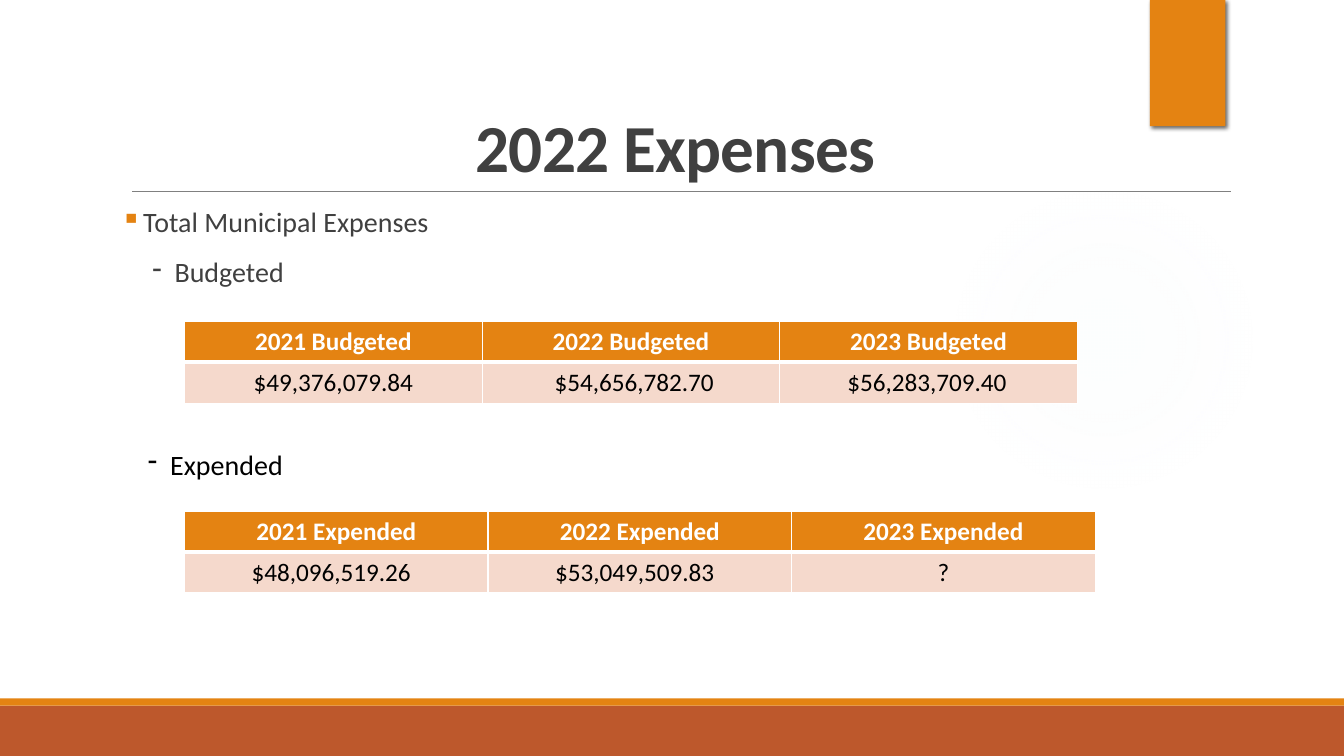
"""Build the 2022 Expenses slide."""
from dataclasses import dataclass

from lxml import etree
from pptx import Presentation, util as u
from pptx.dml.color import RGBColor
from pptx.enum import shapes, text
from pptx.oxml import parse_xml
from pptx.oxml.ns import nsdecls

Cm, Pt = u.Cm, u.Pt


@dataclass(frozen=True)
class Theme:
    """Hold the colours, font and type sizes of the slide."""
    orange: str = "E48312"
    rust: str = "BD582C"
    blush: str = "F5D9CC"
    mist: str = "E0EBF2"
    rule: str = "808080"
    grey: str = "404040"
    white: str = "FFFFFF"
    black: str = "000000"
    font: str = "Calibri"
    title: int = 48
    body: int = 20
    cell: int = 18


THEME = Theme()


def rgb(value):
    """Turn a hex string into a colour."""
    return RGBColor.from_string(value)


def add_xml(parent, body):
    """Append one DrawingML element to a parent."""
    head, tail = body.split(">", 1)
    slash = "/" if head.endswith("/") else ""
    parent.append(parse_xml(f"{head.rstrip('/')} {nsdecls('a')}{slash}>{tail}"))


def write(tf, content, *, size, color, bold=False, align=None, line=None,
          after=None, before=None, bullet=None, bullet_color=None,
          indent=0, hang=0.56, spacing=None, new=False):
    """Write one formatted paragraph into a text frame."""
    p = tf.add_paragraph() if new else tf.paragraphs[0]
    p.alignment, p.line_spacing = align, line
    p.space_before = None if before is None else Pt(before)
    p.space_after = None if after is None else Pt(after)
    if bullet:
        pPr = p._p.get_or_add_pPr()
        pPr.set("marL", str(Cm(indent + hang)))
        pPr.set("indent", str(-Cm(hang)))
        add_xml(pPr, f'<a:buClr><a:srgbClr val="{bullet_color or color}"/></a:buClr>')
        add_xml(pPr, f'<a:buChar char="{bullet}"/>')
    r = p.add_run()
    r.text = content
    r.font.name, r.font.size, r.font.bold = THEME.font, Pt(size), bold
    r.font.color.rgb = rgb(color)
    if spacing:
        r._r.get_or_add_rPr().set("spc", str(spacing))


def add_box(s, left, top, width, height, anchor=text.MSO_ANCHOR.TOP, side=0.25):
    """Add a wrapping text box and return its text frame."""
    tf = s.shapes.add_textbox(Cm(left), Cm(top), Cm(width), Cm(height)).text_frame
    tf.word_wrap, tf.vertical_anchor = True, anchor
    tf.margin_left = tf.margin_right = Cm(side)
    return tf


def add_block(s, left, top, width, height, color, kind=shapes.MSO_SHAPE.RECTANGLE):
    """Add a plain filled shape without outline or shadow."""
    sp = s.shapes.add_shape(kind, Cm(left), Cm(top), Cm(width), Cm(height))
    sp.shadow.inherit = False
    sp.fill.solid()
    sp.fill.fore_color.rgb = rgb(color)
    sp.line.fill.background()
    return sp


def add_glow(s):
    """Add the faint round glow on the right."""
    sp = add_block(s, 23.9, 4.65, 7.82, 7.82, THEME.mist, shapes.MSO_SHAPE.OVAL)
    stops = "".join(
        f'<a:gs pos="{pos}000"><a:srgbClr val="{THEME.mist}">'
        f'<a:alpha val="{alpha}000"/></a:srgbClr></a:gs>'
        for pos, alpha in ((0, 7), (36, 6), (69, 0)))
    grad = parse_xml(
        f'<a:gradFill {nsdecls("a")}><a:gsLst>{stops}</a:gsLst><a:path path="circle">'
        '<a:fillToRect l="50000" t="50000" r="50000" b="50000"/></a:path></a:gradFill>')
    spPr = sp._element.spPr
    solid = spPr.find("{*}solidFill")
    spPr.replace(solid, grad)


def add_tab(s):
    """Add the orange tab with its soft shadow."""
    sp = add_block(s, 28.98, 0, 1.9, 3.18, THEME.orange)
    add_xml(sp._element.spPr.find("{*}effectLst"),
            f'<a:outerShdw blurRad="{Pt(3)}" dist="{Pt(2)}" dir="2700000">'
            f'<a:srgbClr val="{THEME.black}"><a:alpha val="60000"/></a:srgbClr>'
            '</a:outerShdw>')


def add_rule(s):
    """Add the thin line under the title."""
    cxn = s.shapes.add_connector(shapes.MSO_CONNECTOR.STRAIGHT,
                                 Cm(3.33), Cm(4.83), Cm(31.01), Cm(4.83))
    cxn.line.color.rgb, cxn.line.width = rgb(THEME.rule), Pt(0.5)
    etree.SubElement(cxn._element.spPr,
                     "{http://schemas.openxmlformats.org/drawingml/2006/main}effectLst")


def style_cell(cell, content, header, nudge):
    """Fill, border and write one table cell."""
    tcPr = cell._tc.get_or_add_tcPr()
    for side in "LRTB":
        heavy = (header and side == "B") or (not header and side == "T")
        add_xml(tcPr, f'<a:ln{side} w="{Pt(3 if heavy else 1)}"><a:solidFill>'
                      f'<a:srgbClr val="{THEME.white}"/></a:solidFill></a:ln{side}>')
    cell.fill.solid()
    cell.fill.fore_color.rgb = rgb(THEME.orange if header else THEME.blush)
    cell.margin_right = Cm(0.25 - 2 * nudge)
    write(cell.text_frame, content, size=THEME.cell, bold=header,
          color=THEME.white if header else THEME.black, align=text.PP_ALIGN.CENTER)


def add_amounts(s, top, column, label, amounts, nudges):
    """Add a table of yearly amounts, one column a year."""
    years = [f"{2021 + i} {label}" for i in range(len(amounts))]
    table = s.shapes.add_table(2, len(amounts), Cm(4.65), Cm(top),
                               Cm(column * len(amounts)), Cm(2.06)).table
    for col in table.columns:
        col.width = Cm(column)
    for i, row in enumerate((years, amounts)):
        table.rows[i].height = Cm(1.03)
        for j, content in enumerate(row):
            style_cell(table.cell(i, j), content, i == 0, nudges[j] if i else 0)


def main():
    """Build and save the slide."""
    prs = Presentation()
    prs.slide_width, prs.slide_height = Cm(33.87), Cm(19.05)
    s = prs.slides.add_slide(prs.slide_layouts[6])
    add_block(s, 0, 17.78, 33.87, 1.27, THEME.rust)
    add_block(s, 0, 17.6, 33.87, 0.18, THEME.orange)
    add_rule(s)
    add_glow(s)
    add_tab(s)

    title = add_box(s, 3.05, 0.79, 27.94, 4.04, text.MSO_ANCHOR.BOTTOM)
    write(title, "2022 Expenses", size=THEME.title, color=THEME.grey, bold=True,
          align=text.PP_ALIGN.CENTER, line=0.85, spacing=-50)
    body = add_box(s, 3.05, 5.13, 27.94, 11.18, side=0)
    write(body, "Total Municipal Expenses", size=THEME.body, color=THEME.grey,
          line=0.9, after=2, bullet="▪", bullet_color=THEME.orange)
    write(body, "Budgeted", size=THEME.body, color=THEME.grey, line=0.9,
          before=12, after=2, bullet="-", indent=0.79, new=True)
    add_amounts(s, 8.1, 7.5, "Budgeted",
                ("$49,376,079.84", "$54,656,782.70", "$56,283,709.40"),
                (0, 0.08, -0.04))

    expended = add_box(s, 3.05, 11.15, 24.54, 1.12)
    write(expended, "Expended", size=THEME.body, color=THEME.black,
          bullet="-", indent=0.43)
    add_amounts(s, 12.88, 7.65, "Expended",
                ("$48,096,519.26", "$53,049,509.83", "?"), (-0.13, -0.13, 0))
    prs.save("out.pptx")


if __name__ == "__main__":
    main()
